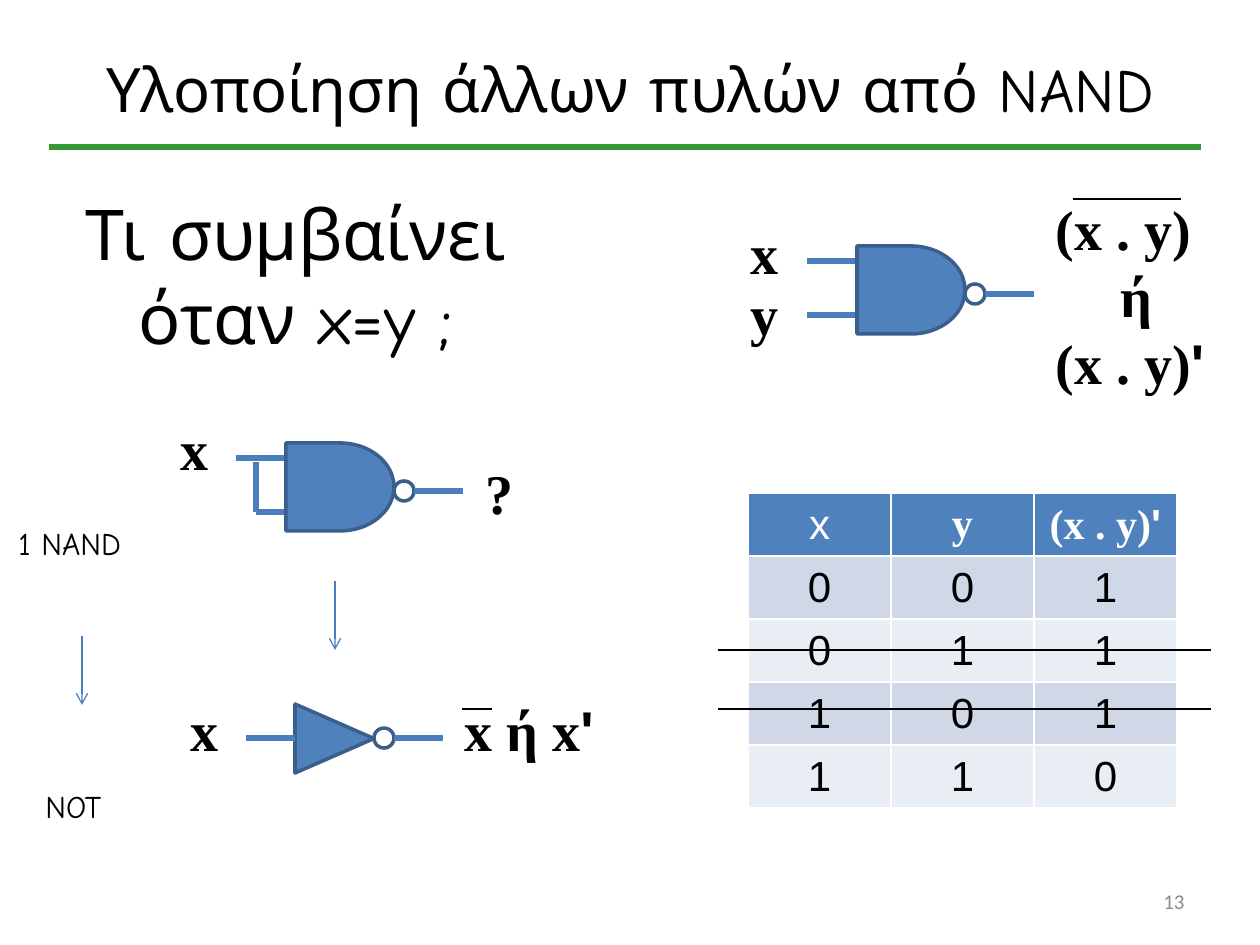
from lxml import etree
from pptx import Presentation
from pptx import util as u
from pptx.dml.color import RGBColor
from pptx.enum import shapes as kinds, text as t
from pptx.oxml.ns import qn

SCALE = 914400 / 126
BLUE, OUTLINE, WIRE = "4F81BD", "3A5F8C", "4B7EBC"
BLACK, WHITE = "000000", "FFFFFF"
SERIF, COMIC = "Times New Roman", "Comic Neue"
PRIME = ("ʹ", "Arial")
LEFT, CENTER, RIGHT = t.PP_ALIGN.LEFT, t.PP_ALIGN.CENTER, t.PP_ALIGN.RIGHT


def px(*lengths):
    return [u.Emu(round(length * SCALE)) for length in lengths]


def color(code):
    return RGBColor.from_string(code)


def write(frame, paragraphs, size=32, font=SERIF, fill=BLACK, bold=False, aligns=(LEFT,)):
    """Each paragraph is a list of strings or (string, font) pairs; aligns repeat."""
    for index, pieces in enumerate(paragraphs):
        paragraph = frame.paragraphs[0] if index == 0 else frame.add_paragraph()
        paragraph.alignment = aligns[index % len(aligns)]
        for piece in pieces:
            words, face = (piece, font) if isinstance(piece, str) else piece
            run = paragraph.add_run()
            run.text = words
            run.font.name, run.font.size, run.font.bold = face, u.Pt(size), bold
            run.font.color.rgb = color(fill)


def add_text(shapes, box, paragraphs, wrap=False, middle=False, **style):
    frame = shapes.add_textbox(*px(*box)).text_frame
    frame.word_wrap = wrap
    if middle:
        frame.vertical_anchor = t.MSO_ANCHOR.MIDDLE
    else:
        frame.auto_size = t.MSO_AUTO_SIZE.SHAPE_TO_FIT_TEXT
    write(frame, paragraphs, **style)


def add_label(shapes, left, top, *pieces, width=54, wrap=False):
    """Bold one-line signal name."""
    add_text(shapes, (left, top, width, 81), [pieces], wrap=wrap, bold=True)


def add_line(shapes, x1, y1, x2, y2, stroke=BLACK, width=0.75, arrow=False):
    line = shapes.add_connector(kinds.MSO_CONNECTOR.STRAIGHT, *px(x1, y1, x2, y2))
    line.line.color.rgb = color(stroke)
    line.line.width = u.Pt(width)
    properties = line._element.spPr
    if arrow:
        etree.SubElement(properties.find(qn("a:ln")), qn("a:tailEnd"), type="arrow")
    etree.SubElement(properties, qn("a:effectLst"))


def add_wire(shapes, *ends):
    add_line(shapes, *ends, stroke=WIRE, width=3)


def add_arrow(shapes, x, top):
    add_line(shapes, x, top, x, top + 69, stroke=WIRE, arrow=True)


def add_symbol(shapes, kind, box, fill=BLUE):
    shape = shapes.add_shape(kind, *px(*box))
    shape.shadow.inherit = False
    shape.fill.solid()
    shape.fill.fore_color.rgb = color(fill)
    shape.line.color.rgb = color(OUTLINE)
    shape.line.width = u.Pt(2)
    return shape


def add_inverted_output(shapes, left, middle):
    """Negation bubble with its output wire."""
    add_symbol(shapes, kinds.MSO_SHAPE.FLOWCHART_CONNECTOR, (left, middle - 10, 20, 20), WHITE)
    add_wire(shapes, left + 20, middle, left + 69, middle)


def add_nand(shapes, left, top, lower_input=50):
    for drop, length in ((15, 50), (69, lower_input)):
        add_wire(shapes, left - length, top + drop, left, top + drop)
    add_inverted_output(shapes, left + 108, top + 48)
    add_symbol(shapes, kinds.MSO_SHAPE.FLOWCHART_DELAY, (left, top, 108, 88))


def add_not_example(shapes):
    """Crossed-out rows of the truth table and the resulting NOT gate."""
    for y in (650, 709):
        add_line(shapes, 718, y, 1211, y)
    add_arrow(shapes, 335, 581)
    triangle = add_symbol(shapes, kinds.MSO_SHAPE.FLOWCHART_MERGE, (300, 699, 69, 79))
    triangle.rotation = 270
    add_inverted_output(shapes, 374, 738)
    add_wire(shapes, 246, 738, 295, 738)
    add_label(shapes, 178, 689, "x")
    add_label(shapes, 452, 689, "x ή x", PRIME, width=186, wrap=True)
    add_line(shapes, 462, 709, 492, 709)


def add_summary(shapes):
    add_text(shapes, (6, 518, 151, 50), [["1 NAND"]], size=18, font=COMIC)
    add_text(shapes, (33, 781, 98, 50), [["NOT"]], size=18, font=COMIC)
    add_arrow(shapes, 82, 636)


def add_truth_table(shapes):
    header = [[("x", "Arial")], ["y"], ["(x . y)", PRIME]]
    rows = [header] + [[[digit] for digit in row] for row in ("001", "011", "101", "110")]
    table = shapes.add_table(len(rows), 3, *px(748, 493, 429, 315)).table
    for r, row in enumerate(rows):
        for c, pieces in enumerate(row):
            cell = table.cell(r, c)
            cell.vertical_anchor = t.MSO_ANCHOR.MIDDLE
            cell.fill.solid()
            band = "D0D8E8" if r % 2 else "E9EDF4"
            cell.fill.fore_color.rgb = color(band if r else BLUE)
            write(cell.text_frame, [pieces], size=24, font="Arial" if r else SERIF,
                  fill=BLACK if r else WHITE, bold=r == 0 and c > 0, aligns=(CENTER,))


def main():
    presentation = Presentation()
    presentation.slide_width, presentation.slide_height = px(1260, 945)
    slide = presentation.slides.add_slide(presentation.slide_layouts[5])
    shapes = slide.shapes

    title = shapes.title
    title.left, title.top, title.width, title.height = px(63, 38, 1134, 100)
    title.text_frame.vertical_anchor = t.MSO_ANCHOR.MIDDLE
    write(title.text_frame, [["Υλοποίηση άλλων πυλών από NAND"]],
          size=35, font=COMIC, aligns=(CENTER,))
    add_line(shapes, 49, 147, 1201, 147, stroke="339933", width=3)
    add_text(shapes, (903, 876, 294, 50), [["13"]], wrap=True, middle=True,
             size=12, font="Calibri", fill="8C8C8C", aligns=(RIGHT,))

    add_nand(shapes, 857, 246)
    add_label(shapes, 738, 212, "x")
    add_label(shapes, 738, 273, "y")
    add_text(shapes, (1043, 188, 186, 217), [["(x . y)"], ["ή"], ["(x . y)", PRIME]],
             wrap=True, bold=True, aligns=(LEFT, CENTER))
    add_line(shapes, 1073, 199, 1181, 199)
    add_truth_table(shapes)

    add_text(shapes, (49, 186, 493, 178), [["Τι συμβαίνει"], ["όταν x=y ;"]], wrap=True,
             middle=True, size=40, font=COMIC, aligns=(CENTER,))
    add_nand(shapes, 286, 443, lower_input=30)
    add_wire(shapes, 256, 462, 256, 512)
    add_label(shapes, 168, 408, "x")
    add_label(shapes, 473, 452, "?", width=49)

    add_not_example(shapes.add_group_shape().shapes)
    add_summary(shapes.add_group_shape().shapes)
    presentation.save("out.pptx")


if __name__ == "__main__":
    main()
